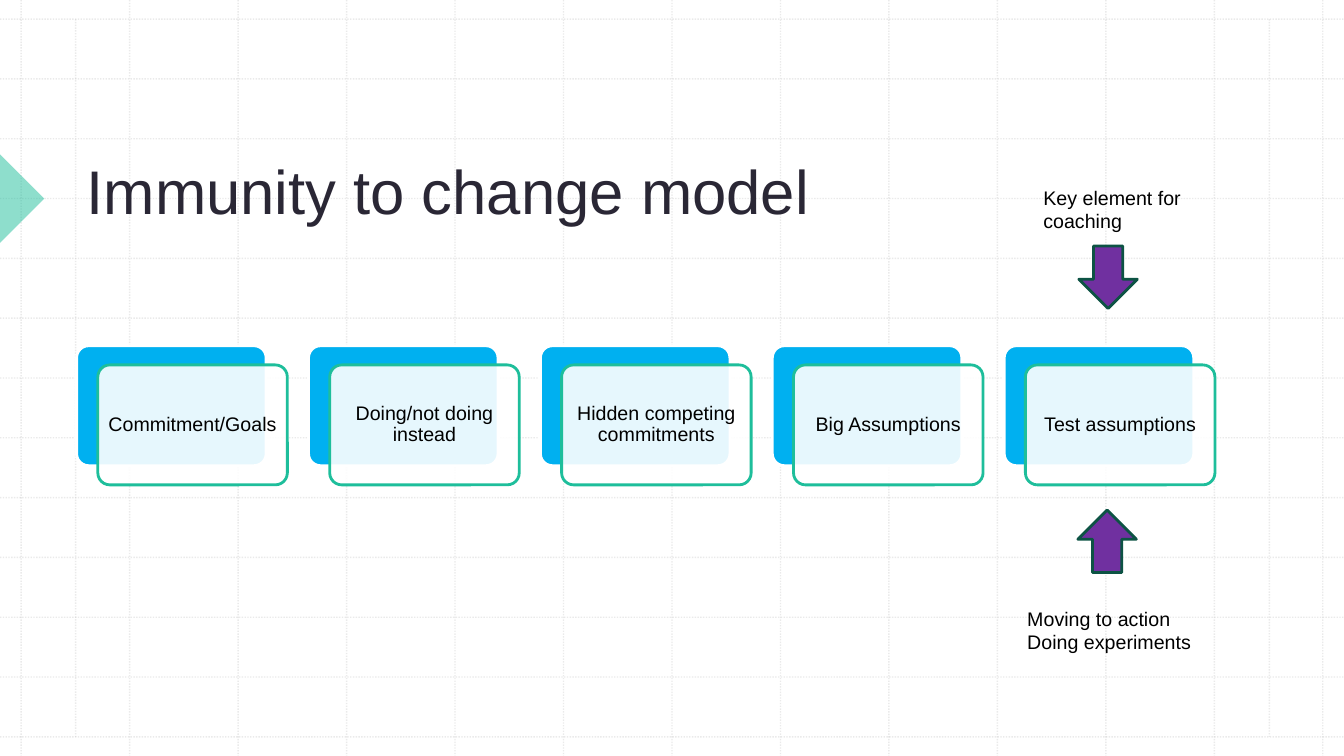
from lxml import etree
from pptx import Presentation
from pptx.dml.color import RGBColor
from pptx.enum.dml import MSO_LINE
from pptx.enum.shapes import MSO_CONNECTOR, MSO_SHAPE
from pptx.enum.text import MSO_ANCHOR, MSO_AUTO_SIZE, PP_ALIGN
from pptx.oxml.ns import qn
from pptx.util import Inches, Pt

STRAIGHT = MSO_CONNECTOR.STRAIGHT
DOTS = MSO_LINE.ROUND_DOT
ROUND = MSO_SHAPE.ROUNDED_RECTANGLE
ARROW = MSO_SHAPE.RIGHT_ARROW
WEDGE = MSO_SHAPE.RIGHT_TRIANGLE
LEFT, CENTER = PP_ALIGN.LEFT, PP_ALIGN.CENTER
TOP, MIDDLE, BOTTOM = MSO_ANCHOR.TOP, MSO_ANCHOR.MIDDLE, MSO_ANCHOR.BOTTOM

WHITE = RGBColor(0xFF, 0xFF, 0xFF)
BLACK = RGBColor(0x00, 0x00, 0x00)
INK = RGBColor(0x2A, 0x27, 0x35)
GRAY = RGBColor(0xBC, 0xBC, 0xBC)
GREEN = RGBColor(0x1E, 0xBE, 0x9B)
BLUE = RGBColor(0x00, 0xB0, 0xF0)
PURPLE = RGBColor(0x70, 0x30, 0xA0)
PINE = RGBColor(0x0D, 0x53, 0x44)

FONT = "Arial"
WIDTH, HEIGHT = 13.33, 7.5
CELLS = 12
GRID_X, GRID_Y = (0.21, 13.12), (0.19, 7.31)
MARGINS = (0.75, 12.59)
CARD_X, CARD_Y, CARD_STEP = 0.76, 3.43, 2.3
STEPS = (
    "Commitment/Goals",
    "Doing/not doing instead",
    "Hidden competing commitments",
    "Big Assumptions",
    "Test assumptions",
)


def box(x, y, w, h):
    return Inches(x), Inches(y), Inches(w), Inches(h)


def set_alpha(fill, percent):
    """Make a solid fill partly transparent."""
    color = fill._xPr.find(qn("a:solidFill"))[0]
    etree.SubElement(color, qn("a:alpha"), val=str(percent * 1000))


def add_rule(shapes, x1, y1, x2, y2):
    """Draw one faint dotted grid line."""
    rule = shapes.add_connector(
        STRAIGHT, Inches(x1), Inches(y1), Inches(x2), Inches(y2))
    rule.line.color.rgb = GRAY
    rule.line.width = Pt(1)
    rule.line.dash_style = DOTS
    set_alpha(rule.line.fill, 30)
    etree.SubElement(rule.element.spPr, qn("a:effectLst"))


def spread(ends):
    first, last = ends
    return [first + (last - first) * i / CELLS for i in range(CELLS + 1)]


def add_grid(slide):
    shapes = slide.shapes.add_group_shape().shapes
    for x in spread(GRID_X):
        add_rule(shapes, x, 0, x, HEIGHT)
    for y in spread(GRID_Y):
        add_rule(shapes, 0, y, WIDTH, y)
    for x in MARGINS:
        add_rule(shapes, x, GRID_Y[0], x, GRID_Y[1])


def add_shape(slide, kind, place, fill, line=None, alpha=100, turn=0):
    shape = slide.shapes.add_shape(kind, *box(*place))
    shape.shadow.inherit = False
    shape.rotation = turn
    shape.fill.solid()
    shape.fill.fore_color.rgb = fill
    if alpha < 100:
        set_alpha(shape.fill, alpha)
    if line is None:
        shape.line.fill.background()
    else:
        shape.line.color.rgb = line
        shape.line.width = Pt(2)
    return shape


def set_text(shape, text, size=14, color=BLACK, align=LEFT, anchor=TOP):
    frame = shape.text_frame
    frame.text = text
    frame.word_wrap = True
    frame.auto_size = MSO_AUTO_SIZE.NONE
    frame.vertical_anchor = anchor
    for para in frame.paragraphs:
        para.alignment = align
        para.font.name = FONT
        para.font.size = Pt(size)
        para.font.color.rgb = color
    return frame


def add_title(slide, text):
    title = slide.shapes.title
    title.left, title.top, title.width, title.height = box(
        0.76, 0.79, 11.29, 1.51)
    set_text(title, text, 44, INK, anchor=BOTTOM)
    title.element.getparent().append(title.element)  # in front of the grid


def add_card(slide, x, text):
    """Draw a blue plate with a labelled, offset card on top."""
    plate = add_shape(slide, ROUND, (x, CARD_Y, 1.88, 1.19), BLUE, WHITE)
    card = add_shape(slide, ROUND, (x + 0.21, CARD_Y + 0.19, 1.88, 1.19),
                     WHITE, GREEN, alpha=90)
    for shape in (plate, card):
        shape.adjustments[0] = 0.1
    frame = set_text(card, text, align=CENTER, anchor=MIDDLE)
    frame.margin_left = frame.margin_right = Inches(0.06)
    frame.margin_top = frame.margin_bottom = Inches(0.06)
    frame.paragraphs[0].line_spacing = 0.9


def add_note(slide, place, text):
    set_text(slide.shapes.add_textbox(*box(*place)), text)


def main():
    deck = Presentation()
    deck.slide_width, deck.slide_height = Inches(WIDTH), Inches(HEIGHT)
    slide = deck.slides.add_slide(deck.slide_layouts.get_by_name("Title Only"))

    add_grid(slide)
    add_shape(slide, WEDGE, (-0.31, 1.66, 0.62, 0.62), GREEN,
              alpha=50, turn=225)
    add_title(slide, "Immunity to change model")
    for i, step in enumerate(STEPS):
        add_card(slide, CARD_X + i * CARD_STEP, step)

    add_shape(slide, ARROW, (10.67, 5.08, 0.62, 0.58), PURPLE, PINE, turn=270)
    add_note(slide, (10.09, 5.97, 2.33, 0.71),
             "Moving to action\nDoing experiments")
    add_shape(slide, ARROW, (10.68, 2.46, 0.62, 0.58), PURPLE, PINE, turn=90)
    add_note(slide, (10.25, 1.79, 1.9, 0.71), "Key element for coaching")

    deck.save("out.pptx")


if __name__ == "__main__":
    main()
